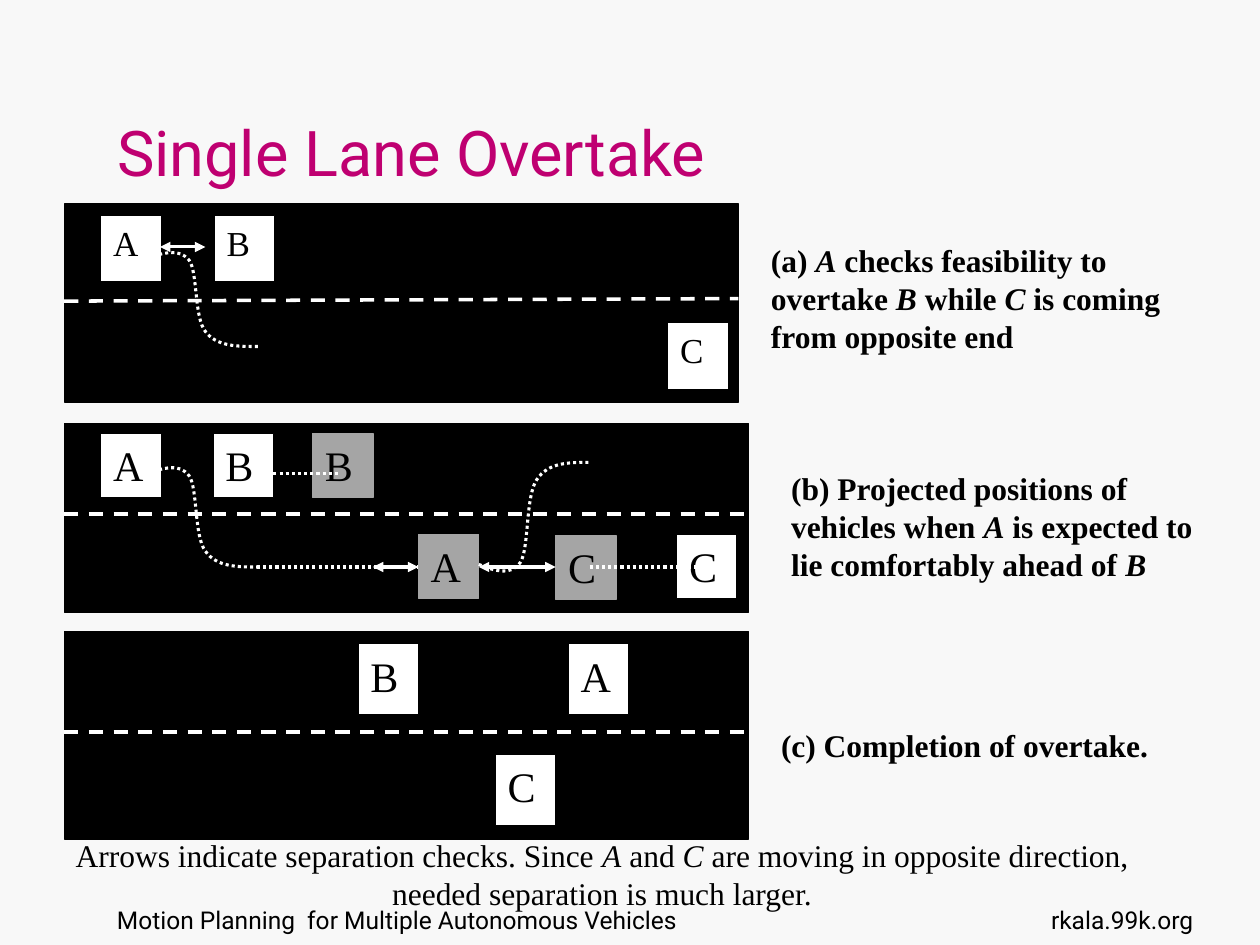
from dataclasses import dataclass

from lxml import etree
from pptx import Presentation
from pptx import util as u
from pptx.dml.color import RGBColor
from pptx.enum import dml, shapes, text
from pptx.oxml import ns


@dataclass(frozen=True)
class Theme:
    background: RGBColor = RGBColor(0xF8, 0xF8, 0xF8)
    title: RGBColor = RGBColor(0xBF, 0x00, 0x71)
    ink: RGBColor = RGBColor(0, 0, 0)
    marking: RGBColor = RGBColor(0xFF, 0xFF, 0xFF)
    projected: RGBColor = RGBColor(0xA5, 0xA5, 0xA5)
    heading_font: str = "Roboto"
    body_font: str = "Times New Roman"
    title_size: int = 36
    caption_size: int = 18
    footer_size: int = 14
    outline: float = 0.75
    lane_width: float = 2
    path_width: float = 1.75


THEME = Theme()
DASH = dml.MSO_LINE.DASH
DOTTED = dml.MSO_LINE.ROUND_DOT
SWERVE = (
    (0.12, -0.06), (0.25, -0.12), (0.33, 0.02),
    (0.4, 0.15), (0.37, 0.67), (0.46, 0.83),
    (0.55, 1), (0.71, 1), (0.88, 1),
)


@dataclass(frozen=True)
class Box:
    left: float
    top: float
    width: float
    height: float

    def lengths(self) -> list[u.Length]:
        return [u.Inches(v) for v in (self.left, self.top, self.width, self.height)]


@dataclass(frozen=True)
class Vehicle:
    name: str
    left: float
    top: float
    projected: bool = False


@dataclass(frozen=True)
class Swerve:
    left: float
    top: float
    drop: float


@dataclass(frozen=True)
class Track:
    left: float
    right: float
    y: float
    arrows: bool = False


@dataclass(frozen=True)
class Scene:
    road: Box
    lane: tuple[float, float]
    vehicle_height: float
    letter_size: int
    vehicles: tuple[Vehicle, ...]
    swerves: tuple[Swerve, ...] = ()
    tracks: tuple[Track, ...] = ()


@dataclass(frozen=True)
class Label:
    box: Box
    words: str
    bold: bool = False
    align: text.PP_ALIGN = text.PP_ALIGN.LEFT
    anchor: text.MSO_ANCHOR = text.MSO_ANCHOR.MIDDLE
    font: str = THEME.body_font
    size: int = THEME.caption_size


SCENES = (
    Scene(Box(0.51, 1.62, 5.35, 1.57), (2.39, 2.37), 0.53, 20,
          (Vehicle("A", 0.8, 1.71), Vehicle("B", 1.7, 1.71), Vehicle("C", 5.3, 2.56)),
          (Swerve(1.17, 2.05, 0.7),),
          (Track(1.27, 1.63, 1.96, True),)),
    Scene(Box(0.51, 3.36, 5.43, 1.5), (4.08, 4.08), 0.51, 24,
          (Vehicle("A", 0.8, 3.44), Vehicle("B", 1.69, 3.44), Vehicle("C", 5.37, 4.24),
           Vehicle("B", 2.48, 3.44, True), Vehicle("A", 3.32, 4.24, True),
           Vehicle("C", 4.41, 4.25, True)),
          (Swerve(1.17, 3.76, 0.74), Swerve(3.8, 4.48, -0.81)),
          (Track(3.8, 4.41, 4.5, True), Track(2.04, 3.32, 4.5), Track(2.96, 3.32, 4.5, True),
           Track(2.17, 2.68, 3.76), Track(4.68, 5.55, 4.5))),
    Scene(Box(0.51, 5.01, 5.43, 1.65), (5.81, 5.81), 0.56, 24,
          (Vehicle("A", 4.51, 5.11), Vehicle("B", 2.84, 5.11), Vehicle("C", 3.93, 5.99))),
)

LABELS = (
    Label(Box(6.02, 1.86, 3.58, 1.01),
          "(a) *A* checks feasibility to overtake *B* while *C* is coming from opposite end", True),
    Label(Box(0.35, 6.58, 8.86, 0.71),
          "Arrows indicate separation checks. Since *A* and *C* are moving in opposite direction, "
          "needed separation is much larger.", align=text.PP_ALIGN.CENTER),
    Label(Box(6.18, 3.67, 3.58, 1.01),
          "(b) Projected positions of vehicles when *A* is expected to lie comfortably ahead of *B*",
          True),
    Label(Box(6.1, 5.71, 3.58, 0.4), "(c) Completion of overtake.", True),
    Label(Box(0.83, 7.13, 6.93, 0.52), "Motion Planning  for Multiple Autonomous Vehicles",
          anchor=text.MSO_ANCHOR.TOP, font=THEME.heading_font, size=THEME.footer_size),
    Label(Box(8.07, 7.13, 1.5, 0.52), "rkala.99k.org", align=text.PP_ALIGN.RIGHT,
          anchor=text.MSO_ANCHOR.TOP, font=THEME.heading_font, size=THEME.footer_size),
)


def add_runs(paragraph, words: str, font: str, size: int,
             color: RGBColor = THEME.ink, bold: bool = False) -> None:
    for index, part in enumerate(words.split("*")):
        if part:
            run = paragraph.add_run()
            run.text = part
            run.font.name, run.font.size = font, u.Pt(size)
            run.font.bold, run.font.italic = bold, index % 2 == 1
            run.font.color.rgb = color


def add_rectangle(group, box: Box, fill: RGBColor, outline: RGBColor):
    shape = group.shapes.add_shape(shapes.MSO_SHAPE.RECTANGLE, *box.lengths())
    shape.shadow.inherit = False
    shape.fill.solid()
    shape.fill.fore_color.rgb = fill
    shape.line.color.rgb = outline
    shape.line.width = u.Pt(THEME.outline)
    return shape


def add_vehicle(group, vehicle: Vehicle, height: float, size: int) -> None:
    fill = THEME.projected if vehicle.projected else THEME.marking
    outline = THEME.projected if vehicle.projected else THEME.ink
    shape = add_rectangle(group, Box(vehicle.left, vehicle.top, 0.48, height), fill, outline)
    shape.text_frame.vertical_anchor = text.MSO_ANCHOR.TOP
    paragraph = shape.text_frame.paragraphs[0]
    paragraph.alignment = text.PP_ALIGN.LEFT
    add_runs(paragraph, vehicle.name, THEME.body_font, size)


def style_line(line, width: float, dash=None) -> None:
    line.color.rgb = THEME.marking
    line.width = u.Pt(width)
    if dash is not None:
        line.dash_style = dash


def add_line(group, start: tuple[float, float], end: tuple[float, float],
             width: float, dash=None, arrows: bool = False) -> None:
    points = [u.Inches(v) for v in (*start, *end)]
    connector = group.shapes.add_connector(shapes.MSO_CONNECTOR.STRAIGHT, *points)
    style_line(connector.line, width, dash)
    if arrows:
        for tag in ("a:headEnd", "a:tailEnd"):
            etree.SubElement(connector.line._ln, ns.qn(tag), type="triangle")
    etree.SubElement(connector._element.spPr, ns.qn("a:effectLst"))


def add_swerve(group, swerve: Swerve) -> None:
    builder = group.shapes.build_freeform(u.Inches(swerve.left), u.Inches(swerve.top))
    builder.add_line_segments(
        [(u.Inches(swerve.left + x), u.Inches(swerve.top + y * swerve.drop)) for x, y in SWERVE],
        close=False)
    shape = builder.convert_to_shape()
    outline = shape._element.find(".//" + ns.qn("a:path"))
    segments = outline.findall(ns.qn("a:lnTo"))
    for index in range(0, len(segments), 3):
        curve = etree.SubElement(outline, ns.qn("a:cubicBezTo"))
        for segment in segments[index:index + 3]:
            curve.append(segment[0])
            outline.remove(segment)
    shape.shadow.inherit = False
    shape.fill.background()
    style_line(shape.line, THEME.path_width, DOTTED)


def add_scene(slide, scene: Scene) -> None:
    group = slide.shapes.add_group_shape()
    road = scene.road
    add_rectangle(group, road, THEME.ink, THEME.ink)
    add_line(group, (road.left, scene.lane[0]), (road.left + road.width, scene.lane[1]),
             THEME.lane_width, DASH)
    for vehicle in scene.vehicles:
        add_vehicle(group, vehicle, scene.vehicle_height, scene.letter_size)
    for swerve in scene.swerves:
        add_swerve(group, swerve)
    for track in scene.tracks:
        add_line(group, (track.left, track.y), (track.right, track.y), THEME.path_width,
                 None if track.arrows else DOTTED, track.arrows)


def add_label(slide, label: Label) -> None:
    frame = slide.shapes.add_textbox(*label.box.lengths()).text_frame
    frame.word_wrap = True
    frame.vertical_anchor = label.anchor
    paragraph = frame.paragraphs[0]
    paragraph.alignment = label.align
    add_runs(paragraph, label.words, label.font, label.size, bold=label.bold)


def add_title(slide, words: str, box: Box) -> None:
    title = slide.shapes.title
    title.left, title.top, title.width, title.height = box.lengths()
    title.text_frame.word_wrap = False
    title.text_frame.vertical_anchor = text.MSO_ANCHOR.BOTTOM
    paragraph = title.text_frame.paragraphs[0]
    paragraph.alignment = text.PP_ALIGN.LEFT
    add_runs(paragraph, words, THEME.heading_font, THEME.title_size, THEME.title)


def main() -> None:
    presentation = Presentation()
    presentation.slide_width, presentation.slide_height = u.Inches(10), u.Inches(7.5)
    slide = presentation.slides.add_slide(presentation.slide_layouts[5])
    slide.background.fill.solid()
    slide.background.fill.fore_color.rgb = THEME.background
    add_title(slide, "Single Lane Overtake", Box(0.83, 0.3, 6.77, 1.25))
    for scene in SCENES:
        add_scene(slide, scene)
    for label in LABELS:
        add_label(slide, label)
    presentation.save("out.pptx")


if __name__ == "__main__":
    main()
